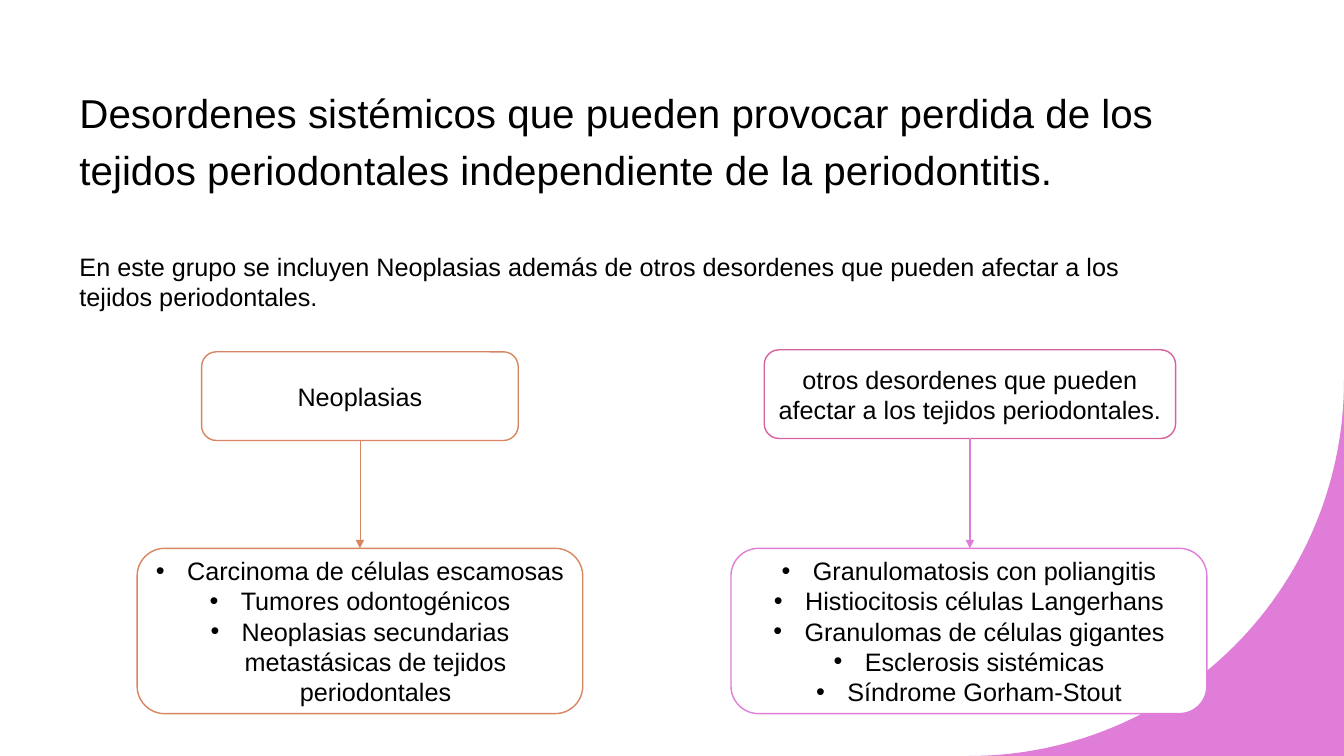
import math

import pptx
import pptx.dml.color
import pptx.enum.shapes
import pptx.enum.text
import pptx.util
from lxml import etree
from pptx.oxml.ns import qn

Inches, Pt = pptx.util.Inches, pptx.util.Pt
RGBColor = pptx.dml.color.RGBColor
SHAPE = pptx.enum.shapes.MSO_SHAPE
ANCHOR = pptx.enum.text.MSO_ANCHOR
ALIGN = pptx.enum.text.PP_ALIGN

BLACK = RGBColor(0x00, 0x00, 0x00)
WHITE = RGBColor(0xFF, 0xFF, 0xFF)
ORANGE = RGBColor(0xD8, 0x86, 0x61)
PINK = RGBColor(0xD8, 0x61, 0x9F)
ORCHID = RGBColor(0xDF, 0x7D, 0xD9)
FONT = "Arial"

# Content
TITLE = ("Desordenes sistémicos que pueden provocar perdida de los tejidos "
         "periodontales independiente de la periodontitis.")
INTRO = ("En este grupo se incluyen Neoplasias además de otros desordenes "
         "que pueden afectar a los tejidos periodontales.")
GROUPS = [
    {"heading": "Neoplasias",
     "heading_box": (2.0, 3.49, 3.14, 0.88), "heading_line": ORANGE,
     "items": ["Carcinoma de células escamosas",
               "Tumores odontogénicos",
               "Neoplasias secundarias metastásicas de tejidos periodontales"],
     "list_box": (1.36, 5.44, 4.42, 1.64), "list_line": ORANGE,
     "arrow_width": 0.5},
    {"heading": "otros desordenes que pueden afectar a los tejidos periodontales.",
     "heading_box": (7.58, 3.47, 4.08, 0.88), "heading_line": PINK,
     "items": ["Granulomatosis con poliangitis",
               "Histiocitosis células Langerhans",
               "Granulomas de células gigantes",
               "Esclerosis sistémicas",
               "Síndrome Gorham-Stout"],
     "list_box": (7.25, 5.44, 4.72, 1.64), "list_line": ORCHID,
     "arrow_width": 1.5},
]

prs = pptx.Presentation()
prs.slide_width, prs.slide_height = Inches(13.33), Inches(7.5)
s = prs.slides.add_slide(prs.slide_layouts[6])


def add_text(p, text, size=18):
    r = p.add_run()
    r.text = text
    r.font.name, r.font.size, r.font.color.rgb = FONT, Pt(size), BLACK


def add_textbox(box, text, size):
    tf = s.shapes.add_textbox(*map(Inches, box)).text_frame
    tf.word_wrap = True
    add_text(tf.paragraphs[0], text, size)
    return tf


def add_bullet(p):
    pPr = p._p.get_or_add_pPr()
    pPr.set("marL", str(Inches(0.31)))
    pPr.set("indent", str(Inches(-0.31)))
    etree.SubElement(pPr, qn("a:buFont")).set("typeface", FONT)
    etree.SubElement(pPr, qn("a:buChar")).set("char", "•")


def add_box(box, line, lines, bulleted=False):
    sp = s.shapes.add_shape(SHAPE.ROUNDED_RECTANGLE, *map(Inches, box))
    sp.shadow.inherit = False
    sp.fill.solid()
    sp.fill.fore_color.rgb = WHITE
    sp.line.color.rgb, sp.line.width = line, Pt(1)
    tf = sp.text_frame
    tf.word_wrap, tf.vertical_anchor = True, ANCHOR.MIDDLE
    for i, text in enumerate(lines):
        p = tf.add_paragraph() if i else tf.paragraphs[0]
        p.alignment = ALIGN.CENTER
        if bulleted:
            add_bullet(p)
        add_text(p, text)
    return sp


def add_arrow(start, end, color, width):
    c = s.shapes.add_connector(pptx.enum.shapes.MSO_CONNECTOR.STRAIGHT, 0, 0, 0, 0)
    c.begin_connect(start, 2)
    c.end_connect(end, 0)
    # Keep the arrow vertical under the heading
    c.end_x = c.begin_x
    c.line.color.rgb, c.line.width = color, Pt(width)
    etree.SubElement(c.line._get_or_add_ln(), qn("a:tailEnd")).set("type", "triangle")
    etree.SubElement(c._element.spPr, qn("a:effectLst"))


# Corner: the area outside a quarter circle
RADIUS, STEPS = 3.72, 60
CENTER_X, CENTER_Y = 13.33 - RADIUS, 7.5 - RADIUS
arc = []
for i in range(STEPS + 1):
    angle = math.pi / 2 * i / STEPS
    arc.append((Inches(CENTER_X + RADIUS * math.cos(angle)),
                Inches(CENTER_Y + RADIUS * math.sin(angle))))
fb = s.shapes.build_freeform(Inches(13.33), Inches(7.5))
fb.add_line_segments(arc, close=True)
corner = fb.convert_to_shape()
corner.shadow.inherit = False
corner.fill.solid()
corner.fill.fore_color.rgb = ORCHID
corner.line.fill.background()

# Title and introduction
tf = add_textbox((0.69, 0.79, 12.06, 1.65), TITLE, 28.8)
tf.vertical_anchor, tf.margin_bottom = ANCHOR.BOTTOM, Inches(0.52)
tf.paragraphs[0].line_spacing = 1.17
add_textbox((0.69, 2.44, 10.53, 0.71), INTRO, 18)

# Groups: heading, list and the arrow between them
for group in GROUPS:
    heading = add_box(group["heading_box"], group["heading_line"], [group["heading"]])
    items = add_box(group["list_box"], group["list_line"], group["items"], bulleted=True)
    add_arrow(heading, items, group["list_line"], group["arrow_width"])

prs.save("out.pptx")
